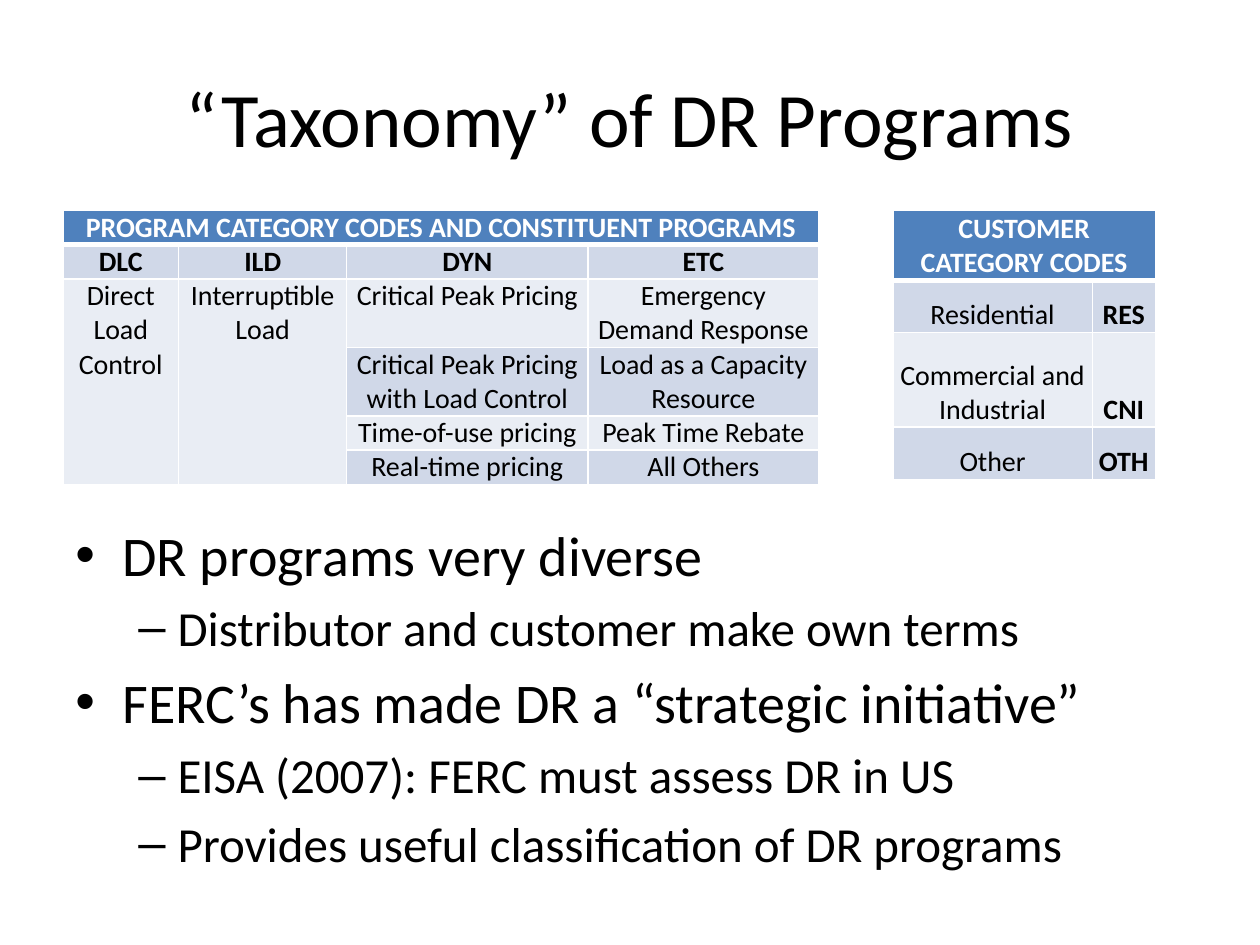
from lxml import etree
from pptx import Presentation
from pptx import util as u
from pptx.dml.color import RGBColor
from pptx.enum import text
from pptx.oxml.ns import qn

FONT = "Calibri"
BLACK, WHITE, BLUE = "000000", "FFFFFF", "4F81BD"
BANDS = ["E9EDF4", "D0D8E8"]

CODES = [
    ["PROGRAM CATEGORY CODES AND CONSTITUENT PROGRAMS", "", "", ""],
    ["DLC", "ILD", "DYN", "ETC"],
    ["Direct Load Control", "Interruptible Load",
     "Critical Peak Pricing", "Emergency Demand Response"],
    ["", "", "Critical Peak Pricing with Load Control",
     "Load as a Capacity Resource"],
    ["", "", "Time-of-use pricing", "Peak Time Rebate"],
    ["", "", "Real-time pricing", "All Others"],
]
GROUPS = [
    ["CUSTOMER CATEGORY CODES", ""],
    ["Residential", "RES"],
    ["Commercial and Industrial", "CNI"],
    ["Other", "OTH"],
]
POINTS = [
    (0, "DR programs very diverse"),
    (1, "Distributor and customer make own terms"),
    (0, "FERC’s has made DR a “strategic initiative”"),
    (1, "EISA (2007): FERC must assess DR in US"),
    (1, "Provides useful classification of DR programs"),
]
LEVELS = [("•", 32, 0.95, -0.95), ("–", 28, 2.06, -0.79)]


def paint(item, shade):
    item.fill.solid()
    item.fill.fore_color.rgb = RGBColor.from_string(shade)


def style(para, size, shade=BLACK, bold=False):
    for run in para.runs:
        font = run.font
        font.name, font.size, font.bold = FONT, u.Pt(size), bold
        paint(font, shade)


def edge(cell, sides):
    props = cell._tc.get_or_add_tcPr()
    for spot, (side, width) in enumerate(sides.items()):
        line = etree.Element(qn("a:ln" + side), w=str(u.Pt(width)))
        fill = etree.SubElement(line, qn("a:solidFill"))
        etree.SubElement(fill, qn("a:srgbClr"), val=WHITE)
        props.insert(spot, line)


def add_title(slide, box):
    title = slide.shapes.title
    title.left, title.top, title.width, title.height = map(u.Cm, box)
    frame = title.text_frame
    frame.text = "“Taxonomy” of DR Programs"
    frame.vertical_anchor = text.MSO_ANCHOR.MIDDLE
    para = frame.paragraphs[0]
    para.alignment = text.PP_ALIGN.CENTER
    style(para, 44)


def add_grid(slide, left, top, data, cols, rows, pads, anchor, strong):
    grid = slide.shapes.add_table(
        len(rows), len(cols), u.Cm(left), u.Cm(top),
        u.Cm(sum(cols)), u.Cm(sum(rows))).table
    for col, width in zip(grid.columns, cols):
        col.width = u.Cm(width)
    for row, height in zip(grid.rows, rows):
        row.height = u.Cm(height)
    for i, line in enumerate(data):
        for j, words in enumerate(line):
            cell = grid.cell(i, j)
            cell.text = words
            (cell.margin_left, cell.margin_top,
             cell.margin_right, cell.margin_bottom) = map(u.Cm, pads)
            cell.vertical_anchor = anchor
            para = cell.text_frame.paragraphs[0]
            para.alignment = text.PP_ALIGN.CENTER
            style(para, 16, BLACK if i else WHITE, i == 0 or strong(i, j))
            paint(cell, BANDS[i % 2] if i else BLUE)
            edge(cell, {"L": 1, "R": 1, "T": 3 if i == 1 else 1,
                        "B": 1 if i else 3})
    grid.cell(0, 0).merge(grid.cell(0, len(cols) - 1))
    return grid


def add_codes(slide, left, top):
    grid = add_grid(slide, left, top, CODES, [2.33, 3.39, 4.86, 4.66],
                    [0.69, 0.69, 1.38, 1.38, 0.69, 0.69],
                    [0.18, 0, 0.18, 0], text.MSO_ANCHOR.TOP,
                    lambda i, j: i == 1)
    for j in range(2):
        grid.cell(2, j).merge(grid.cell(5, j))


def add_groups(slide, left, top):
    add_grid(slide, left, top, GROUPS, [4.02, 1.27],
             [1.4, 1.05, 1.91, 1.05], [0.03, 0.03, 0.03, 0],
             text.MSO_ANCHOR.BOTTOM, lambda i, j: j == 1)


def add_points(slide, box):
    frame = slide.shapes.add_textbox(*map(u.Cm, box)).text_frame
    frame.word_wrap = True
    for i, (level, words) in enumerate(POINTS):
        para = frame.add_paragraph() if i else frame.paragraphs[0]
        para.text = words
        para.level = level
        mark, size, margin, indent = LEVELS[level]
        style(para, size)
        props = para._p.get_or_add_pPr()
        props.set("marL", str(u.Cm(margin)))
        props.set("indent", str(u.Cm(indent)))
        gap = etree.SubElement(props, qn("a:spcBef"))
        etree.SubElement(gap, qn("a:spcPct"), val="20000")
        etree.SubElement(props, qn("a:buFont"), typeface="Arial")
        etree.SubElement(props, qn("a:buChar"), char=mark)


def main():
    deck = Presentation()
    deck.slide_width, deck.slide_height = u.Cm(25.4), u.Cm(19.05)
    slide = deck.slides.add_slide(deck.slide_layouts[5])
    add_title(slide, (1.27, 0.76, 22.86, 3.18))
    add_groups(slide, 18, 4.24)
    add_codes(slide, 1.27, 4.24)
    add_points(slide, (1.27, 10.37, 22.23, 7.62))
    deck.save("out.pptx")


if __name__ == "__main__":
    main()
